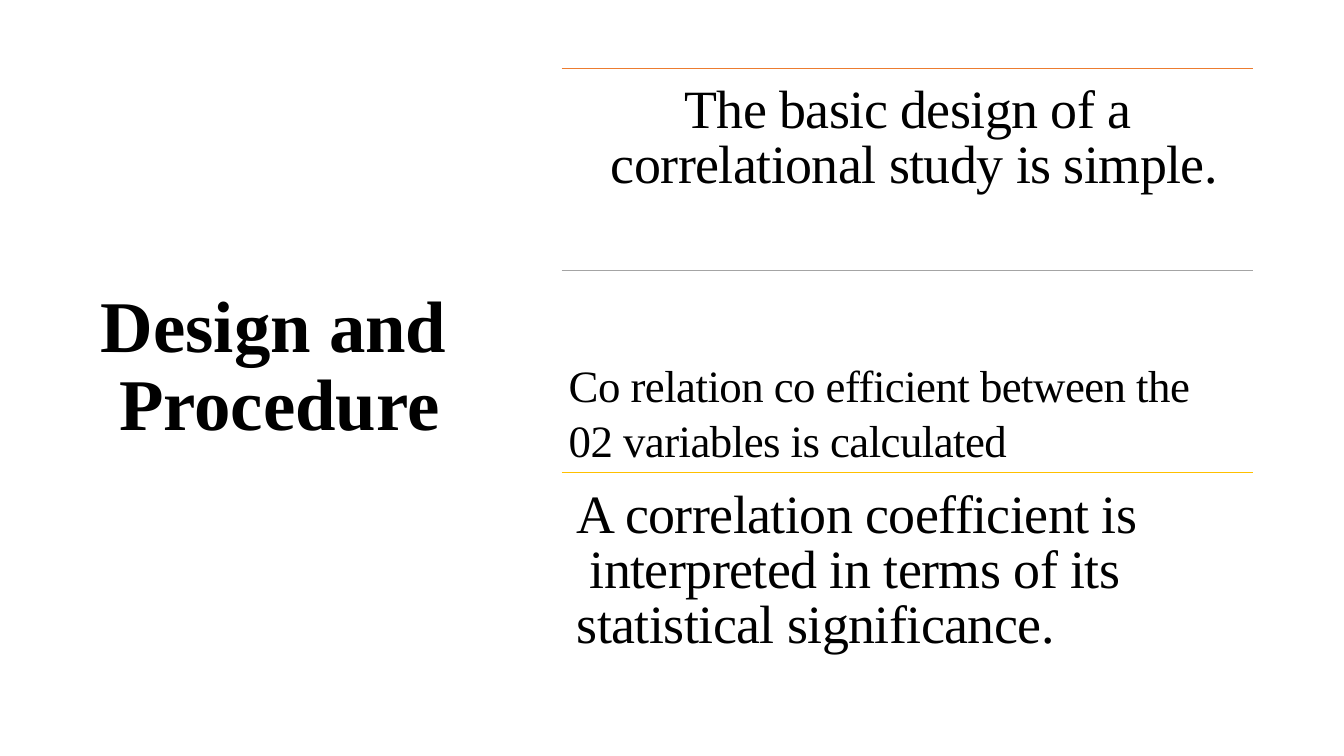
from lxml.etree import SubElement
from pptx import Presentation
from pptx.dml.color import RGBColor
from pptx.enum.shapes import MSO_CONNECTOR
from pptx.enum.text import MSO_ANCHOR, MSO_AUTO_SIZE, PP_ALIGN
from pptx.oxml.ns import qn
from pptx.util import Inches, Pt

BLACK = RGBColor(0x00, 0x00, 0x00)
ORANGE = RGBColor(0xEC, 0x7C, 0x30)
GREY = RGBColor(0xA4, 0xA4, 0xA4)
GOLD = RGBColor(0xFF, 0xC0, 0x00)

RULE_LEFT, RULE_RIGHT = 5.57, 12.43
RULE_TOP, ROW_HEIGHT = 0.68, 2.005
TEXT_LEFT, TEXT_GAP = 5.72, 0.05


def set_text(sp, box, text, size, leading, spacing,
             align=PP_ALIGN.LEFT, bold=False, inset=(0, 0.11)):
    """Place sp at box (inches) and fill it with one paragraph; spacing is in 1/100 pt."""
    sp.left, sp.top, sp.width, sp.height = [Inches(v) for v in box]
    tf = sp.text_frame
    tf.text = text
    tf.word_wrap = True
    tf.auto_size = MSO_AUTO_SIZE.NONE
    tf.vertical_anchor = MSO_ANCHOR.TOP
    tf.margin_left, tf.margin_top = [Inches(v) for v in inset]
    tf.margin_right = tf.margin_bottom = 0
    p = tf.paragraphs[0]
    p.alignment = align
    p.line_spacing = Pt(leading)
    p.space_before = Pt(8)
    pPr = p._p.get_or_add_pPr()
    pPr.set("marL", "0")
    pPr.set("indent", "0")
    SubElement(pPr, qn("a:buNone"))
    for r in p.runs:
        r.font.name = "Times New Roman"
        r.font.size = Pt(size)
        r.font.bold = bold
        r.font.color.rgb = BLACK
        r._r.get_or_add_rPr().set("spc", str(spacing))


prs = Presentation()
prs.slide_width, prs.slide_height = Inches(13.33), Inches(7.5)
s = prs.slides.add_slide(prs.slide_layouts[1])

set_text(s.shapes.title, (1, 2.75, 3.47, 1.68), "Design and\v Procedure",
         52, 56.1, 0, bold=True)

# Coloured rules that open the three rows
rule_tops = [RULE_TOP + row * ROW_HEIGHT for row in range(3)]
for top, color in zip(rule_tops, (ORANGE, GREY, GOLD)):
    rule = s.shapes.add_connector(MSO_CONNECTOR.STRAIGHT, Inches(RULE_LEFT), Inches(top),
                                  Inches(RULE_RIGHT), Inches(top))
    rule.line.color.rgb = color
    rule.line.width = Pt(1)
    SubElement(rule._element.spPr, qn("a:effectLst"))

# Middle row: body text, inset to the right-hand column
set_text(s.placeholders[1], (0.92, 2, 11.5, 2.6),
         "Co relation co efficient between the\v02 variables is calculated",
         32, 39.3, -40, inset=(4.72, 1.54))

# First and last rows
for top, width, height, align, text in (
    (rule_tops[0], 6.7, 1.21, PP_ALIGN.CENTER,
     "The basic design of a \vcorrelational study is simple."),
    (rule_tops[2], 5.65, 1.76, PP_ALIGN.LEFT,
     "A correlation coefficient is\v interpreted in terms of its\vstatistical significance."),
):
    set_text(s.shapes.add_textbox(0, 0, 0, 0), (TEXT_LEFT, top + TEXT_GAP, width, height),
             text, 38.5, 39.3, -40, align)

prs.save("out.pptx")
